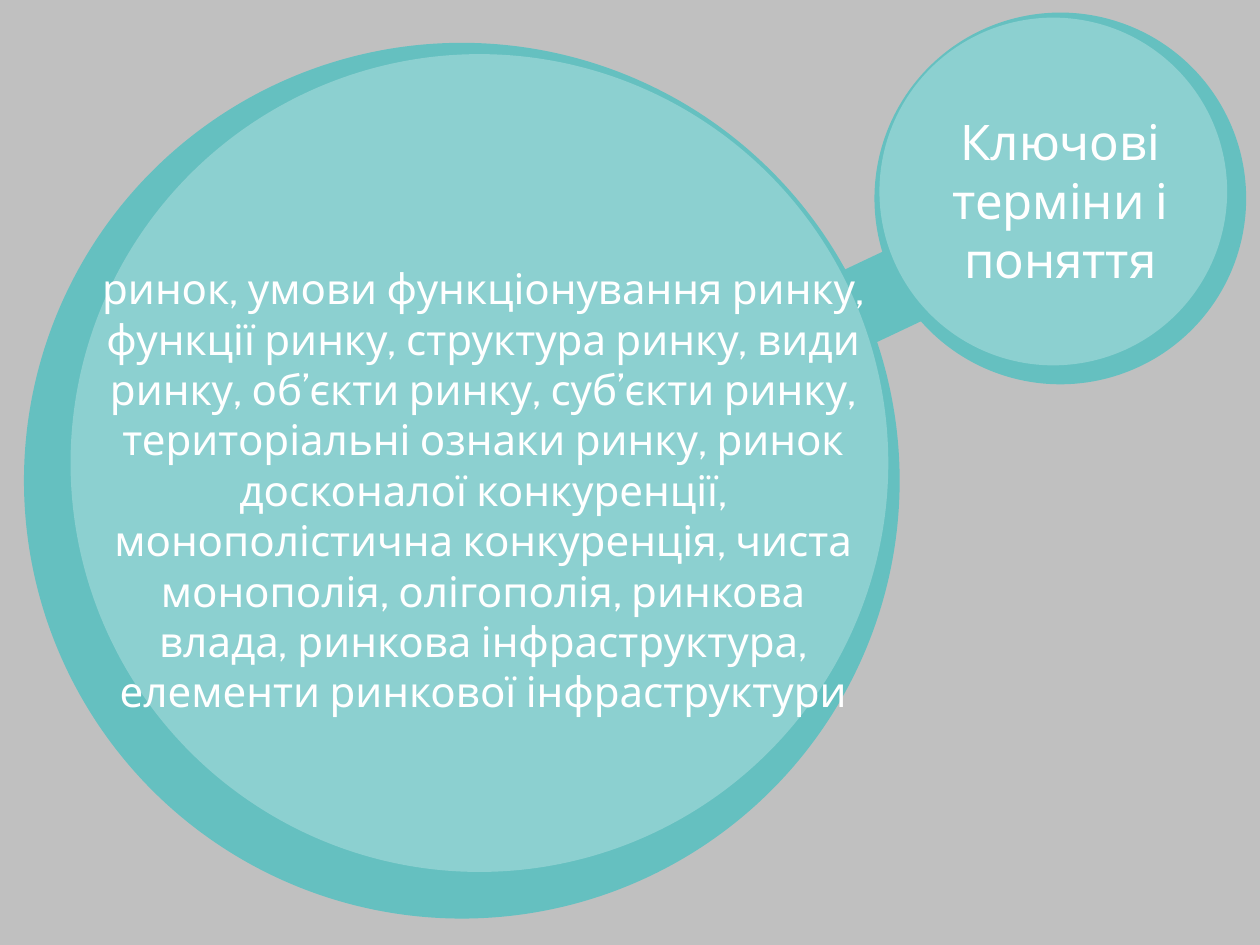
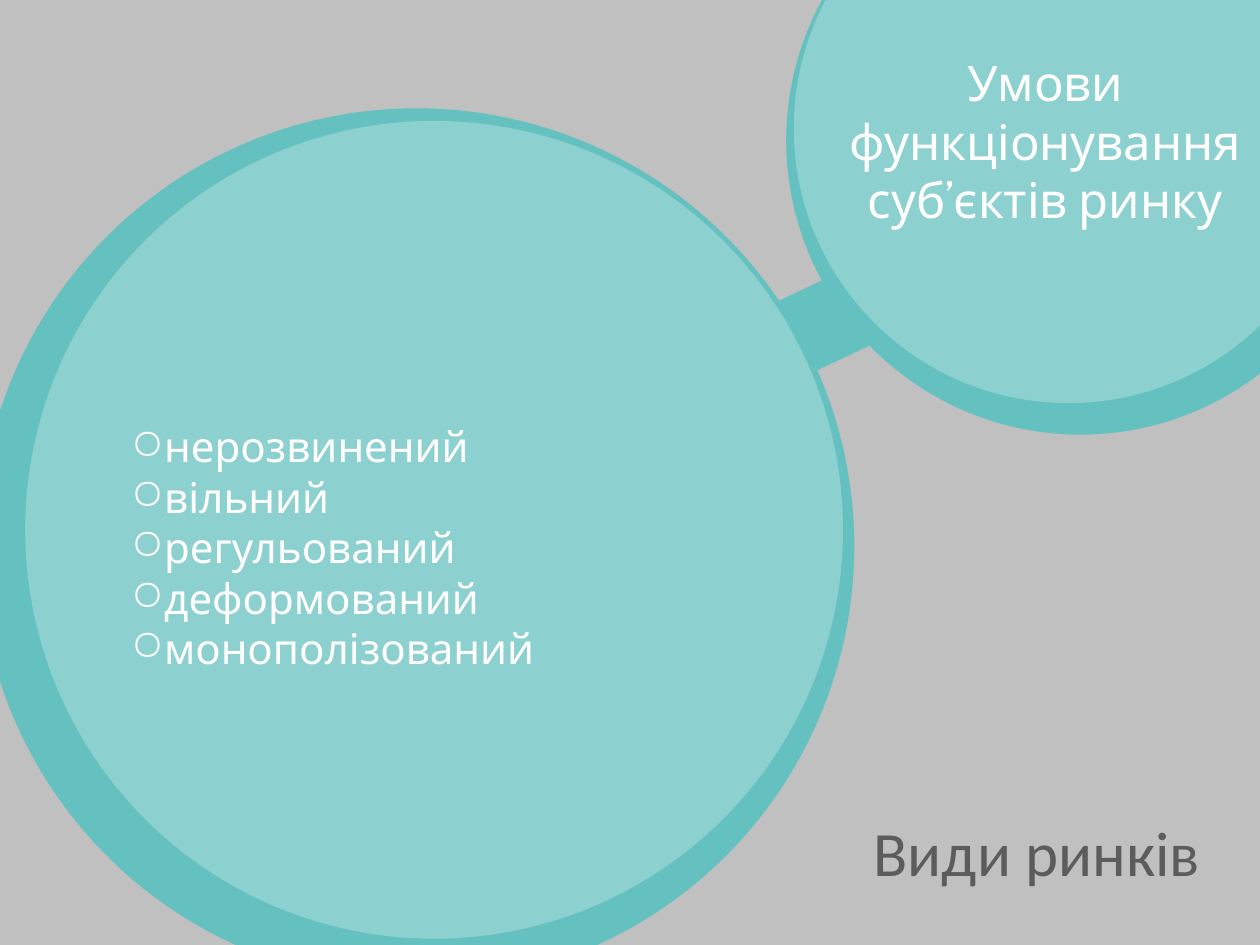
import pptx
import pptx.util
import pptx.dml.color
import pptx.enum.shapes
import pptx.enum.text
import pptx.oxml.ns
import lxml.etree

Inches = pptx.util.Inches
Shape = pptx.enum.shapes.MSO_SHAPE
Align = pptx.enum.text.PP_ALIGN
Anchor = pptx.enum.text.MSO_ANCHOR

COLORS = {
    "backdrop": "C0C0C0",
    "rim": "65C0C0",
    "disc": "8CD0D0",
    "light": "FFFFFF",
    "caption": "5C5C5C",
}


def add_filled(page, kind, bounds, color, rotation=0):
    shape = page.shapes.add_shape(kind, *map(Inches, bounds))
    shape.shadow.inherit = False
    shape.fill.solid()
    shape.fill.fore_color.rgb = pptx.dml.color.RGBColor.from_string(COLORS[color])
    shape.line.fill.background()
    shape.rotation = rotation


def add_text(page, bounds, lines, size, font="Cabin", color="light", anchor=Anchor.MIDDLE, bullet=None):
    box = page.shapes.add_textbox(*map(Inches, bounds))
    frame = box.text_frame
    frame.word_wrap = True
    frame.vertical_anchor = anchor
    frame.text = "\n".join(lines)
    for para in frame.paragraphs:
        para.alignment = Align.LEFT if bullet else Align.CENTER
        para.font.size = pptx.util.Pt(size)
        para.font.name = font
        para.font.color.rgb = pptx.dml.color.RGBColor.from_string(COLORS[color])
        if bullet:
            properties = para._p.get_or_add_pPr()
            properties.set("marL", "0")
            properties.set("indent", "0")
            mark = lxml.etree.Element(pptx.oxml.ns.qn("a:buChar"), char=bullet)
            properties.insert_element_before(mark, "a:tabLst", "a:defRPr", "a:extLst")


KEY_TERMS = (
    "ринок, умови функціонування ринку, функції ринку, структура ринку, види ринку, "
    "об’єкти ринку, суб’єкти ринку, територіальні ознаки ринку, ринок досконалої "
    "конкуренції, монополістична конкуренція, чиста монополія, олігополія, ринкова "
    "влада, ринкова інфраструктура, елементи ринкової інфраструктури"
)
MARKET_TYPES = ["нерозвинений", "вільний", "регульований", "деформований", "монополізований"]

SLIDES = [
    {
        "title": "Ключові терміни і поняття",
        "title_box": (7.12, 0.87, 2.59, 1.43),
        "title_rim": (6.94, 0.1, 2.95),
        "title_disc": (6.98, 0.14, 2.76),
        "body": [KEY_TERMS],
        "body_box": (0.64, 2.02, 6.39, 3.73),
        "body_rim": (0.19, 0.34, 6.95),
        "body_disc": (0.56, 0.43, 6.49),
        "bullet": None,
        "caption": None,
    },
    {
        "title": "Умови функціонування суб’єктів ринку",
        "title_box": (6.59, -0.01, 3.41, 2.25),
        "title_rim": (6.24, -1.22, 4.67),
        "title_disc": (6.3, -1.16, 4.36),
        "body": MARKET_TYPES,
        "body_box": (0.94, 2.18, 4.74, 4.32),
        "body_rim": (-0.17, 0.86, 6.95),
        "body_disc": (0.2, 0.96, 6.49),
        "bullet": "○",
        "caption": "Види ринків",
    },
]

deck = pptx.Presentation()
deck.slide_width = Inches(10)
deck.slide_height = Inches(7.5)

for content in SLIDES:
    page = deck.slides.add_slide(deck.slide_layouts[6])
    add_filled(page, Shape.RECTANGLE, (0, 0, 10, 7.5), "backdrop")
    add_filled(page, Shape.RECTANGLE, (5.9, 1.96, 2.51, 0.63), "rim", rotation=334.7)

    for part, size, bullet in (("title", 28, None), ("body", 24, content["bullet"])):
        for layer in ("rim", "disc"):
            left, top, diameter = content[f"{part}_{layer}"]
            add_filled(page, Shape.OVAL, (left, top, diameter, diameter), layer)
        lines = [content["title"]] if part == "title" else content["body"]
        add_text(page, content[f"{part}_box"], lines, size, bullet=bullet)

    if content["caption"]:
        add_text(page, (6.78, 6.41, 2.9, 0.78), [content["caption"]], 36,
                 font="Calibri", color="caption", anchor=Anchor.TOP)

deck.save("out.pptx")
